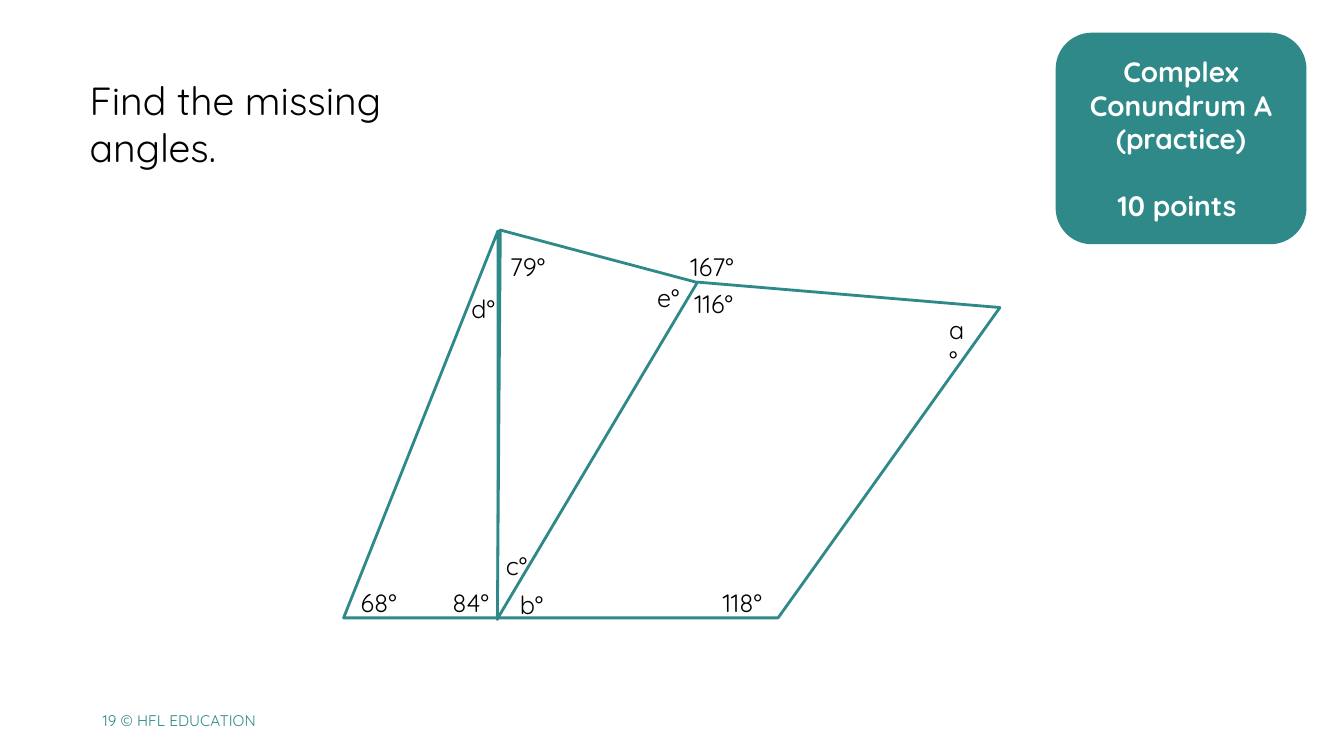
from pptx import Presentation
from pptx.dml.color import RGBColor
from pptx.enum.shapes import MSO_SHAPE
from pptx.enum.text import MSO_ANCHOR, PP_ALIGN
from pptx.util import Cm, Pt

COLORS = {"teal": "2F8989", "white": "FFFFFF", "black": "000000"}
FONT = "Quicksand"


def color(name):
    """Return a named colour of the slide."""
    return RGBColor.from_string(COLORS[name])


def add_run(p, text, size, name, bold=False):
    """Add one formatted run to a paragraph."""
    r = p.add_run()
    r.text = text
    r.font.name = FONT
    r.font.size = Pt(size)
    r.font.bold = bold
    r.font.color.rgb = color(name)


def add_text(s, box, text, size, name="black", wrap=True, anchor=MSO_ANCHOR.TOP):
    """Place a single-paragraph text box at box, in centimetres."""
    tf = s.shapes.add_textbox(*map(Cm, box)).text_frame
    tf.word_wrap = wrap
    tf.vertical_anchor = anchor
    add_run(tf.paragraphs[0], text, size, name)


def style(sp, fill):
    """Give a shape its fill and teal outline."""
    sp.shadow.inherit = False
    sp.fill.solid()
    sp.fill.fore_color.rgb = color(fill)
    sp.line.color.rgb = color("teal")
    sp.line.width = Pt(2)


def add_triangle(s, box, apex, rotation=0):
    """Draw a triangle with its apex at a fraction of its width."""
    sp = s.shapes.add_shape(MSO_SHAPE.ISOSCELES_TRIANGLE, *map(Cm, box))
    sp.adjustments[0] = apex
    sp.rotation = rotation
    style(sp, "white")


def add_figure(s, left, top):
    """Draw the three joined polygons and their angle labels."""
    add_triangle(s, (left, top, 3.89, 9.75), 1)
    add_triangle(s, (left + 2.64, top + 0.48, 5.16, 9.5), 0.525, 194.9)

    corners = [(3.89, 9.75), (8.92, 1.29), (16.54, 1.93), (10.95, 9.75)]
    points = [(Cm(left + x), Cm(top + y)) for x, y in corners]
    outline = s.shapes.build_freeform(*points[0])
    outline.add_line_segments(points[1:], close=True)
    style(outline.convert_to_shape(), "white")

    widths = {2: 1.1, 3: 1.52, 4: 1.9}
    labels = [
        ("167°", 8.49, 0.4), ("116°", 8.59, 1.32), ("118°", 9.3, 8.86),
        ("b°", 4.19, 8.91), ("e°", 7.65, 1.17), ("c°", 3.84, 7.92),
        ("84°", 2.49, 8.86), ("79°", 3.94, 0.4), ("d°", 2.97, 1.44),
        ("68°", 0.18, 8.86),
    ]
    for text, x, y in labels:
        add_text(s, (left + x, top + y, widths[len(text)], 1.02), text, 18, wrap=False)
    add_text(s, (left + 15.01, top + 1.98, 1, 1.02), "a°", 18)


def add_badge(s, box):
    """Draw the rounded badge with the puzzle name and its points."""
    sp = s.shapes.add_shape(MSO_SHAPE.ROUNDED_RECTANGLE, *map(Cm, box))
    style(sp, "teal")
    tf = sp.text_frame
    tf.word_wrap = True
    tf.vertical_anchor = MSO_ANCHOR.MIDDLE
    lines = [("Complex Conundrum A", 0), ("(practice)", 0), ("10 points ", 24)]
    for i, (text, gap) in enumerate(lines):
        p = tf.add_paragraph() if i else tf.paragraphs[0]
        p.alignment = PP_ALIGN.CENTER
        p.space_before = Pt(gap)
        add_run(p, text, 20, "white", bold=True)


def main():
    """Build and save the slide."""
    prs = Presentation()
    prs.slide_width, prs.slide_height = Cm(33.87), Cm(19.05)
    s = prs.slides.add_slide(prs.slide_layouts[6])
    add_text(s, (2.34, 17.65, 6.99, 1.02), "19 © HFL EDUCATION", 11, "teal",
             anchor=MSO_ANCHOR.MIDDLE)
    add_figure(s, 8.66, 5.82)
    add_text(s, (2.01, 1.8, 11.23, 1.44), "Find the missing angles.", 28)
    add_badge(s, (26.64, 0.86, 6.25, 5.26))
    prs.save("out.pptx")


if __name__ == "__main__":
    main()
